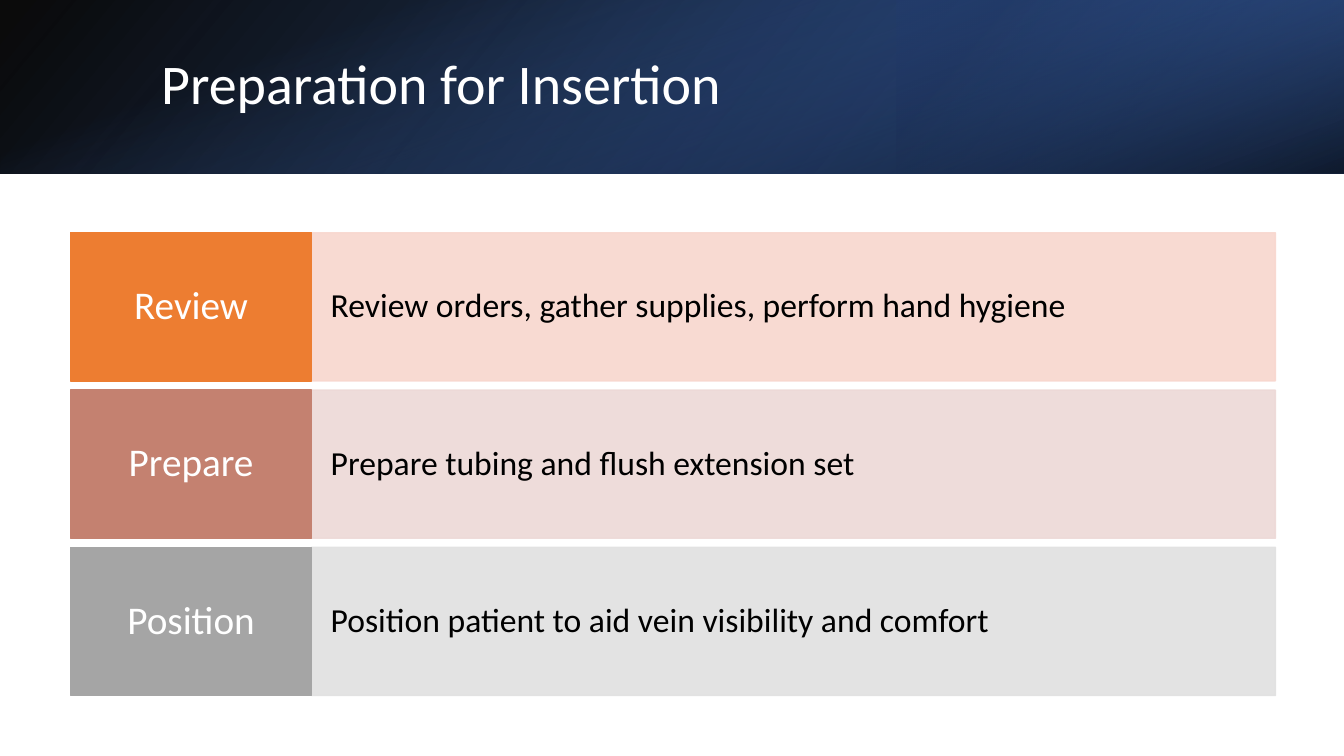
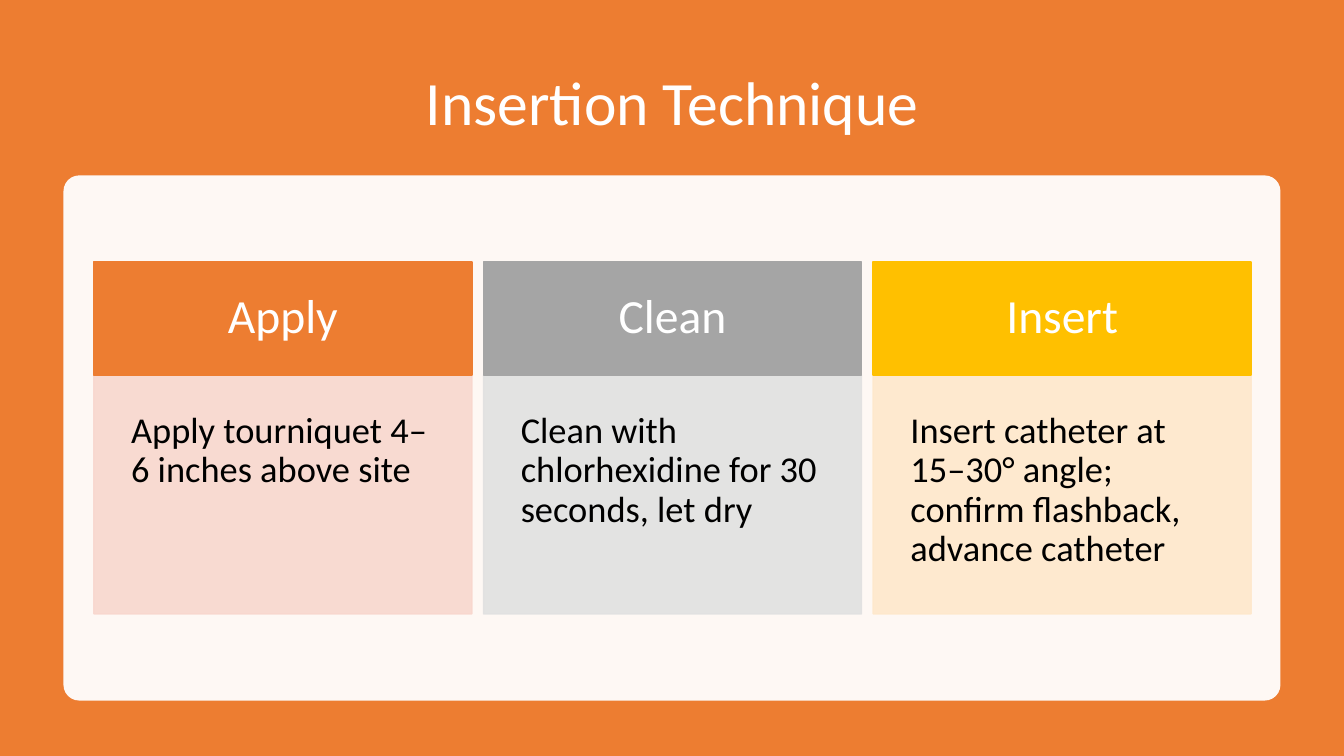
from lxml.etree import SubElement
from pptx import Presentation
from pptx.dml.color import RGBColor
from pptx.enum.shapes import MSO_SHAPE as Preset
from pptx.enum.text import MSO_ANCHOR as Anchor, PP_ALIGN as Align
from pptx.oxml.ns import qn
from pptx.util import Inches, Pt

FONT = "Calibri"
WHITE, BLACK = "FFFFFF", "000000"
ORANGE, CLAY, GRAY, GOLD = "ED7D31", "C48170", "A5A5A5", "FFC000"
PEACH, ROSE, SILVER, CREAM = "F8D7CE", "EDD9D7", "E1E1E1", "FFE8CC"
SLIDE_W, SLIDE_H = 13.33, 7.5
BAND_H = 1.72
TINT_ALPHA = 90

PREPARATION = "Preparation for Insertion"
PREPARATION_STEPS = [
    ("Review", "Review orders, gather supplies, perform hand hygiene", ORANGE, PEACH),
    ("Prepare", "Prepare tubing and flush extension set", CLAY, ROSE),
    ("Position", "Position patient to aid vein visibility and comfort", GRAY, SILVER),
]
TECHNIQUE = "Insertion Technique"
TECHNIQUE_STEPS = [
    ("Apply", "Apply tourniquet 4–6 inches above site", ORANGE, PEACH),
    ("Clean", "Clean with chlorhexidine for 30 seconds, let dry", GRAY, SILVER),
    ("Insert", "Insert catheter at 15–30° angle; confirm flashback, advance catheter", GOLD, CREAM),
]
BAND_LAYERS = [
    ((0, 0, SLIDE_W, BAND_H), 0, True, 140, [(0, BLACK, 96), (100, "2F5597", 100)]),
    ((8.89, 0, 4.44, BAND_H), 180, True, 320, [(19, "203864", 68), (100, "4472C4", 79)]),
    (((SLIDE_W - BAND_H) / 2, (BAND_H - SLIDE_W) / 2, BAND_H, SLIDE_W), 90, False, 340,
     [(23, "4472C4", 0), (99, BLACK, 74)]),
]


def rgb(value):
    return RGBColor.from_string(value)


def set_alpha(color_element, percent):
    SubElement(color_element, qn("a:alpha")).set("val", str(percent * 1000))


def add_block(slide, box, color, alpha=100, outlined=False, preset=Preset.RECTANGLE):
    block = slide.shapes.add_shape(preset, *map(Inches, box))
    block.shadow.inherit = False
    block.fill.solid()
    block.fill.fore_color.rgb = rgb(color)
    if outlined:
        block.line.color.rgb = rgb(color)
        block.line.width = Pt(1)
    else:
        block.line.fill.background()
    if alpha < 100:
        for color_element in block.element.spPr.iter(qn("a:srgbClr")):
            set_alpha(color_element, alpha)
    return block


def add_band_layer(slide, box, rotation, flipped, angle, stops):
    layer = add_block(slide, box, WHITE)
    layer.rotation = rotation
    properties = layer.element.spPr
    if flipped:
        properties.find(qn("a:xfrm")).set("flipH", "1")
    gradient = SubElement(properties, qn("a:gradFill"))
    gradient.set("rotWithShape", "1")
    stop_list = SubElement(gradient, qn("a:gsLst"))
    for position, color, alpha in stops:
        stop = SubElement(stop_list, qn("a:gs"))
        stop.set("pos", str(position * 1000))
        color_element = SubElement(stop, qn("a:srgbClr"))
        color_element.set("val", color)
        set_alpha(color_element, alpha)
    direction = SubElement(gradient, qn("a:lin"))
    direction.set("ang", str(angle * 60000))
    direction.set("scaled", "0")
    properties.replace(properties.find(qn("a:solidFill")), gradient)


def write(shape, text, size, color, align=Align.LEFT, anchor=Anchor.MIDDLE, insets=(0.1, 0.05)):
    frame = shape.text_frame
    frame.word_wrap = True
    frame.vertical_anchor = anchor
    frame.margin_left = frame.margin_right = Inches(insets[0])
    frame.margin_top = frame.margin_bottom = Inches(insets[1])
    paragraph = frame.paragraphs[0]
    paragraph.text = text
    paragraph.alignment = align
    paragraph.line_spacing = 0.9
    paragraph.font.name = FONT
    paragraph.font.size = Pt(size)
    paragraph.font.color.rgb = rgb(color)


def add_title(slide, box, text, size, align):
    write(slide.shapes.add_textbox(*map(Inches, box)), text, size, WHITE, align)


def add_step(slide, step, label_box, detail_box, sizes, insets, detail_anchor):
    label, detail, strong, tint = step
    detail_block = add_block(slide, detail_box, tint, TINT_ALPHA, outlined=True)
    write(detail_block, detail, sizes[1], BLACK, anchor=detail_anchor, insets=insets[1])
    label_block = add_block(slide, label_box, strong, outlined=True)
    write(label_block, label, sizes[0], WHITE, Align.CENTER, insets=insets[0])


def build_preparation(slide):
    for layer in BAND_LAYERS:
        add_band_layer(slide, *layer)
    add_title(slide, (1.5, 0.38, 10.98, 0.96), PREPARATION, 40, Align.LEFT)
    left, top, label_w, detail_w, row_h, pitch = 0.7, 2.31, 2.39, 9.56, 1.47, 1.56
    for index, step in enumerate(PREPARATION_STEPS):
        y = top + index * pitch
        add_step(slide, step, (left, y, label_w, row_h), (left + label_w, y, detail_w, row_h),
                 (28, 24), ((0.13, 0.15), (0.19, 0.37)), Anchor.MIDDLE)


def build_technique(slide):
    add_block(slide, (0, 0, SLIDE_W, SLIDE_H), ORANGE)
    add_title(slide, (0.92, 0.5, 11.5, 1.1), TECHNIQUE, 44, Align.CENTER)
    card = add_block(slide, (0.63, 1.74, 12.07, 5.21), WHITE, 95, preset=Preset.ROUNDED_RECTANGLE)
    card.adjustments[0] = 0.03
    left, top, column_w, label_h, detail_h, pitch = 0.93, 2.6, 3.75, 1.12, 2.37, 3.865
    for index, step in enumerate(TECHNIQUE_STEPS):
        x = left + index * pitch
        add_step(slide, step, (x, top, column_w, label_h), (x, top + label_h, column_w, detail_h),
                 (34, 26), ((0.3, 0.3), (0.37, 0.37)), Anchor.TOP)


def main():
    deck = Presentation()
    deck.slide_width, deck.slide_height = Inches(SLIDE_W), Inches(SLIDE_H)
    for build in (build_preparation, build_technique):
        build(deck.slides.add_slide(deck.slide_layouts[6]))
    deck.save("out.pptx")


if __name__ == "__main__":
    main()
